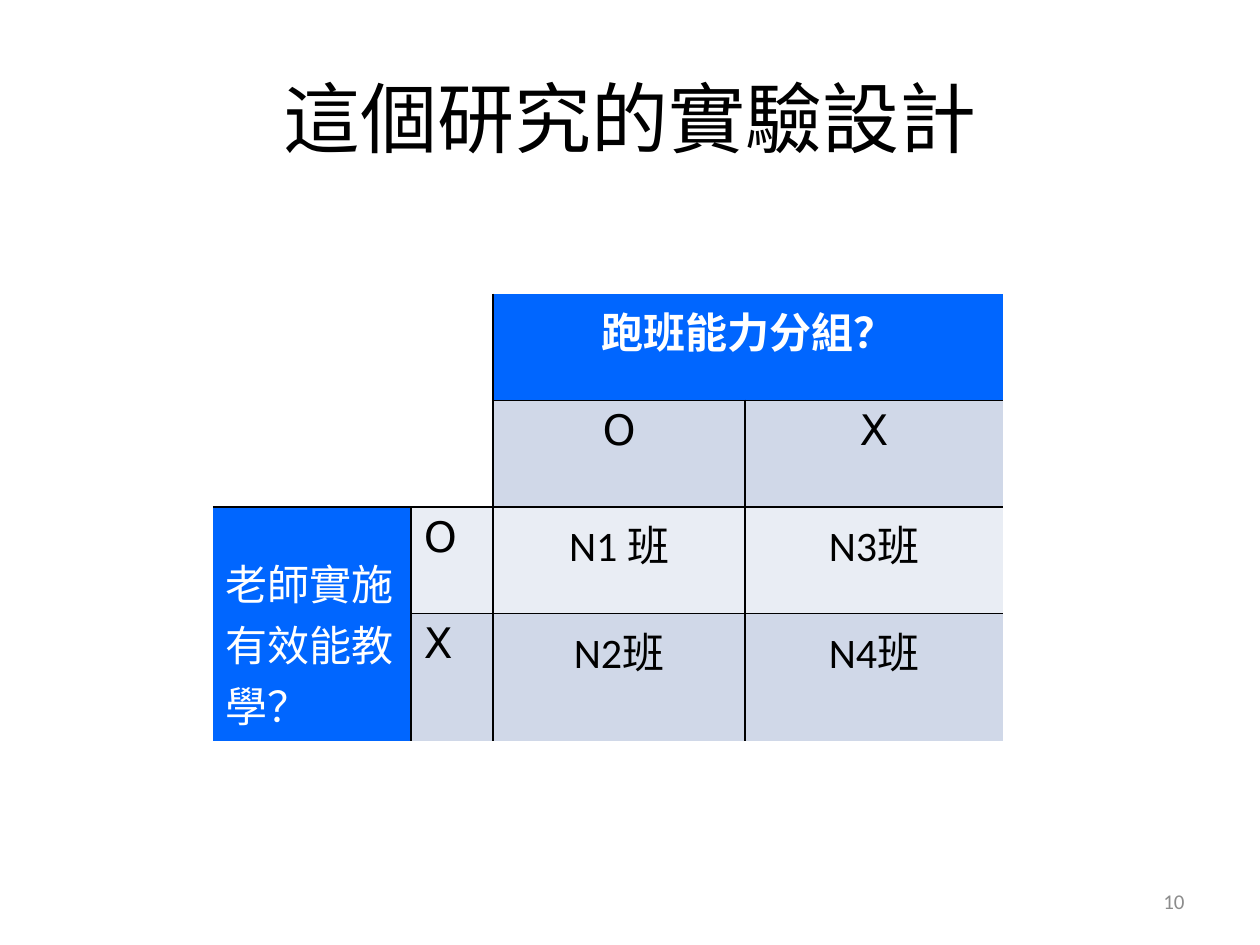
from dataclasses import dataclass

from lxml.etree import SubElement
from pptx import Presentation
from pptx.dml.color import RGBColor as RGB
from pptx.enum.text import MSO_ANCHOR as Anchor, PP_ALIGN as Align
from pptx.oxml.ns import qn
from pptx.util import Cm, Pt


@dataclass(frozen=True)
class Theme:
    font: str = "Calibri"
    mark_font: str = "DejaVu Sans"
    black: str = "000000"
    white: str = "FFFFFF"
    grey: str = "8C8C8C"
    blue: str = "0066FF"
    band: str = "D0D8E8"
    light: str = "E9EDF4"
    title: int = 44
    body: int = 24
    small: int = 12
    line: int = 1


class Deck:
    def __init__(self, prs, theme):
        self.theme = theme
        self.slide = prs.slides.add_slide(prs.slide_layouts[6])

    def set_text(self, tf, text, size, color, align, font=None, bold=False):
        tf.text = text
        tf.word_wrap = True
        p = tf.paragraphs[0]
        p.alignment = align
        for r in p.runs:
            r.font.name = font or self.theme.font
            r.font.size = Pt(size)
            r.font.bold = bold
            r.font.color.rgb = RGB.from_string(color)

    def text(self, box, text, size, color, align):
        tf = self.slide.shapes.add_textbox(*map(Cm, box)).text_frame
        self.set_text(tf, text, size, color, align)
        tf.vertical_anchor = Anchor.MIDDLE

    def table(self, left, top, widths, heights):
        frame = self.slide.shapes.add_table(
            len(heights), len(widths), Cm(left), Cm(top),
            Cm(sum(widths)), Cm(sum(heights)))
        table = frame.table
        table.first_row = table.horz_banding = False
        for column, width in zip(table.columns, widths):
            column.width = Cm(width)
        for row, height in zip(table.rows, heights):
            row.height = Cm(height)
        return table

    def borders(self, cell, shown):
        tc_pr = cell._tc.get_or_add_tcPr()
        for i, (side, visible) in enumerate(zip("LRTB", shown)):
            ln = tc_pr.makeelement(qn(f"a:ln{side}"), w=str(Pt(self.theme.line)))
            tc_pr.insert(i, ln)
            if visible:
                fill = SubElement(ln, qn("a:solidFill"))
                SubElement(fill, qn("a:srgbClr"), val=self.theme.black)
            else:
                SubElement(ln, qn("a:noFill"))

    def cell(self, table, row, col, text="", fill=None, color=None,
             align=Align.CENTER, font=None, bold=False, span=(1, 1), pad=None):
        c = table.cell(row, col)
        bottom, right = row + span[0] - 1, col + span[1] - 1
        if span != (1, 1):
            c.merge(table.cell(bottom, right))
        self.set_text(c.text_frame, text, self.theme.body,
                      color or self.theme.black, align, font, bold)
        if pad:
            c.margin_top = Cm(pad)
        last_row, last_col = len(table.rows) - 1, len(table.columns) - 1
        for i in range(row, bottom + 1):
            for j in range(col, right + 1):
                part = table.cell(i, j)
                if fill:
                    part.fill.solid()
                    part.fill.fore_color.rgb = RGB.from_string(fill)
                else:
                    part.fill.background()
                self.borders(part, (j == col > 0, j == right < last_col,
                                    i == row > 0, i == bottom < last_row))


def main():
    prs = Presentation()
    prs.slide_width, prs.slide_height = Cm(25.4), Cm(19.05)
    t = Theme()
    deck = Deck(prs, t)

    deck.text((1.27, 0.76, 22.86, 3.18), "這個研究的實驗設計",
              t.title, t.black, Align.CENTER)
    deck.text((18.21, 17.65, 5.92, 1.02), "10", t.small, t.grey, Align.RIGHT)

    table = deck.table(4.29, 5.92, (4, 1.65, 5.08, 5.2), (2.15, 2.15, 2.15, 2.57))
    deck.cell(table, 0, 0, span=(2, 2))
    deck.cell(table, 0, 2, "跑班能力分組？", t.blue, t.white, bold=True, span=(1, 2))
    deck.cell(table, 2, 0, "老師實施有效能教學？", t.blue, t.white, Align.LEFT,
              span=(2, 1), pad=0.9)
    for col, mark in enumerate("OX", 2):
        deck.cell(table, 1, col, mark, t.band, font=t.mark_font)
    groups = (("O", t.light, ("N1 班", "N3班")), ("X", t.band, ("N2班", "N4班")))
    for row, (mark, fill, names) in enumerate(groups, 2):
        deck.cell(table, row, 1, mark, fill, align=Align.LEFT, font=t.mark_font)
        for col, name in enumerate(names, 2):
            deck.cell(table, row, col, name, fill)

    prs.save("out.pptx")


if __name__ == "__main__":
    main()
